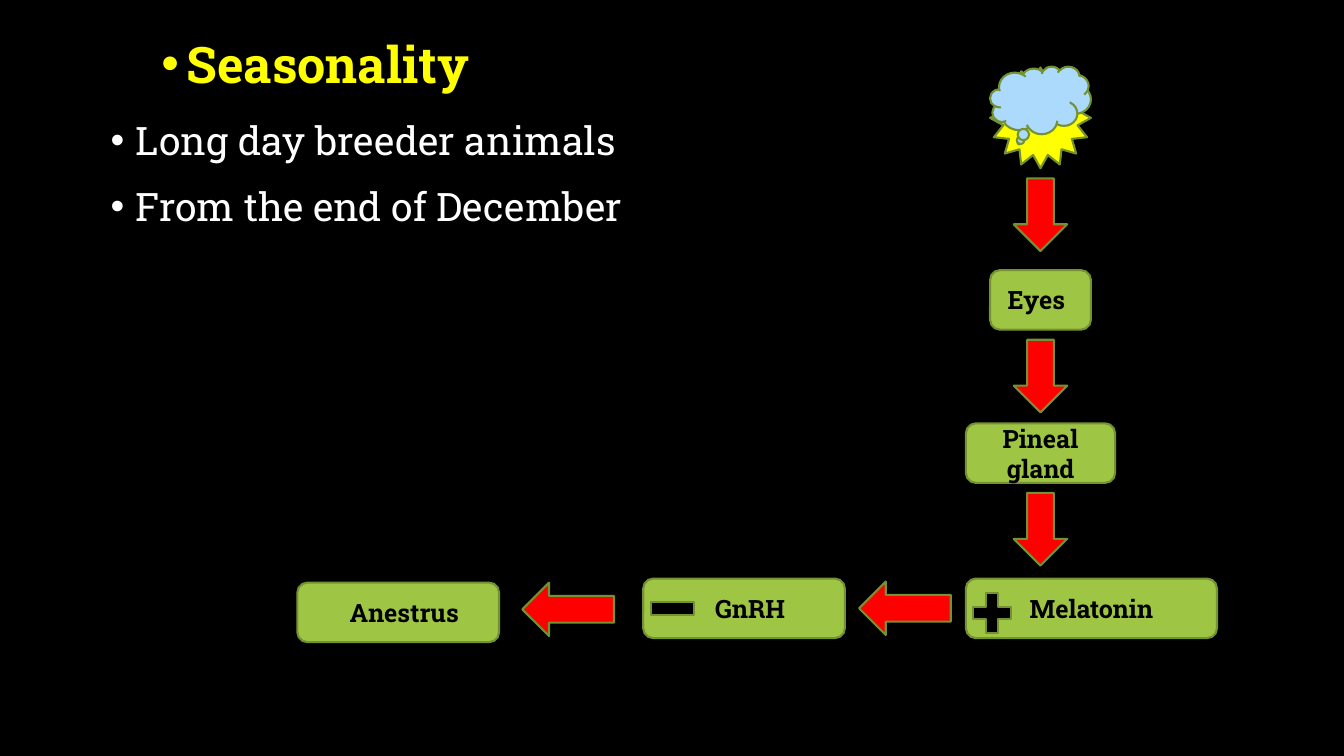
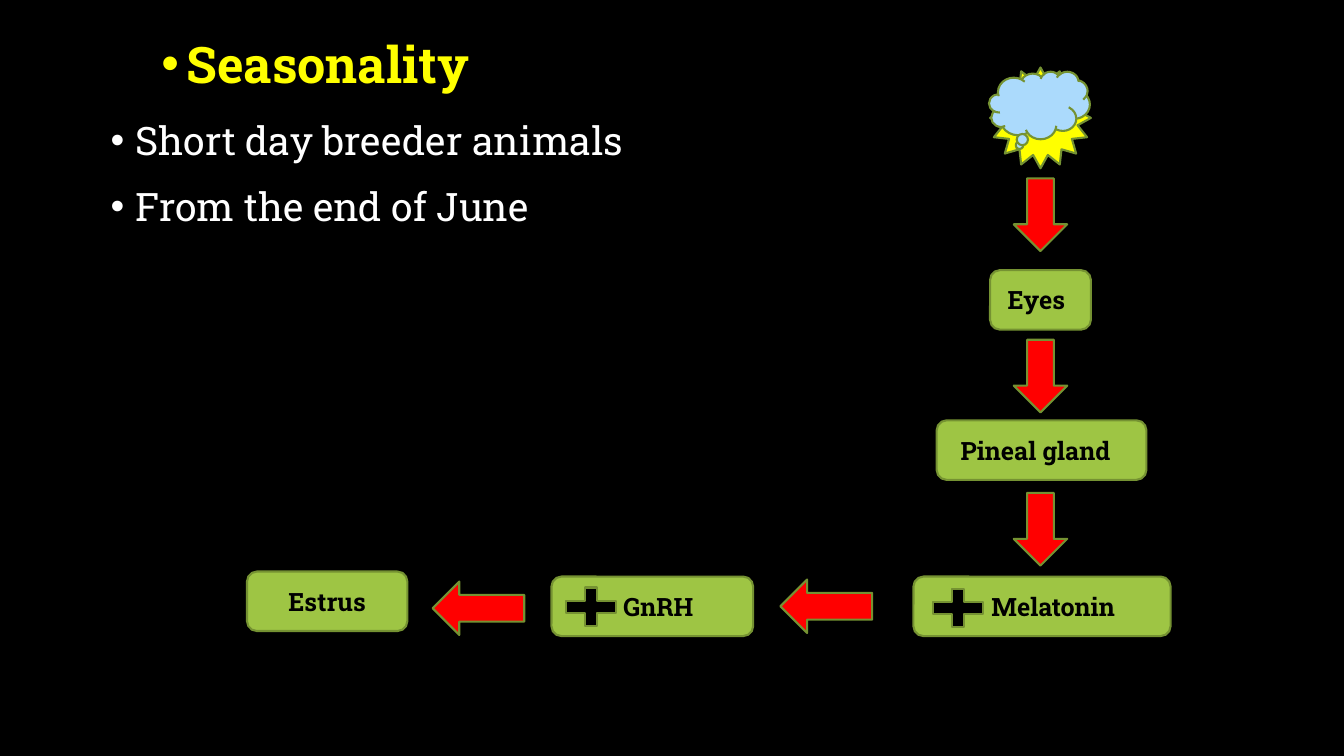
from dataclasses import dataclass

from lxml import etree
from pptx import Presentation
from pptx.dml.color import RGBColor
from pptx.enum.shapes import MSO_SHAPE
from pptx.enum.text import MSO_ANCHOR, MSO_AUTO_SIZE, PP_ALIGN
from pptx.oxml.ns import qn
from pptx.util import Inches, Pt

STAR, CLOUD = MSO_SHAPE.STAR_16_POINT, MSO_SHAPE.CLOUD_CALLOUT
DOWN, LEFT = MSO_SHAPE.DOWN_ARROW, MSO_SHAPE.LEFT_ARROW
BOX = MSO_SHAPE.ROUNDED_RECTANGLE
PLUS, MINUS = MSO_SHAPE.MATH_PLUS, MSO_SHAPE.MATH_MINUS
TOP, MIDDLE = MSO_ANCHOR.TOP, MSO_ANCHOR.MIDDLE
ALIGN_LEFT, ALIGN_CENTER = PP_ALIGN.LEFT, PP_ALIGN.CENTER
NO_AUTOFIT = MSO_AUTO_SIZE.NONE


@dataclass(frozen=True)
class Theme:
    font: str = "Roboto Slab"
    black: str = "000000"
    white: str = "FFFFFF"
    yellow: str = "FFFF00"
    red: str = "FF0000"
    green: str = "9EC544"
    outline: str = "759232"
    sky: str = "ABDAFC"
    title_size: int = 36
    body_size: int = 28
    label_size: int = 18
    line_width: float = 1.5


THEME = Theme()
AXIS = 10.32            # centre of the vertical chain
INSET = 0.1
BOX_HEIGHT = 0.59
ARROW_WIDTH = 0.53
DOWN_LENGTH, LEFT_LENGTH = 0.72, 0.91
DOWN_TOPS = (1.77, 3.37, 4.89)


def rgb(value):
    return RGBColor.from_string(value)


def write(p, text, size, color, bold=False, align=ALIGN_LEFT, spacing=1.0, before=0):
    p.alignment = align
    p.line_spacing = spacing
    p.space_before = Pt(before)
    r = p.add_run()
    r.text = text
    r.font.name = THEME.font
    r.font.size = Pt(size)
    r.font.bold = bold
    r.font.color.rgb = rgb(color)


def add_bullet(p, margin):
    """Hang a round bullet a quarter inch left of the margin."""
    pPr = p._p.get_or_add_pPr()
    pPr.set("marL", str(Inches(margin)))
    pPr.set("indent", str(Inches(-0.25)))
    etree.SubElement(pPr, qn("a:buFont")).set("typeface", "Arial")
    etree.SubElement(pPr, qn("a:buChar")).set("char", "•")


class Deck:
    def __init__(self):
        self.prs = Presentation()
        self.prs.slide_width, self.prs.slide_height = Inches(13.33), Inches(7.5)
        fill = self.prs.slide_master.background.fill
        fill.solid()
        fill.fore_color.rgb = rgb(THEME.black)
        self.slide = None

    def new_slide(self, title):
        self.slide = self.prs.slides.add_slide(self.prs.slide_layouts[5])
        sp = self.slide.shapes.title
        sp.left, sp.top, sp.width, sp.height = map(Inches, (1, 0.28, 6, 0.75))
        tf = sp.text_frame
        tf.auto_size = NO_AUTOFIT
        tf.vertical_anchor = TOP
        p = tf.paragraphs[0]
        add_bullet(p, 0.75)
        write(p, title, THEME.title_size, THEME.yellow, bold=True)

    def bullets(self, lines):
        sp = self.slide.shapes.add_textbox(*map(Inches, (1, 1.06, 7, 1.5)))
        tf = sp.text_frame
        tf.word_wrap = True
        for i, line in enumerate(lines):
            p = tf.add_paragraph() if i else tf.paragraphs[0]
            add_bullet(p, 0.25)
            write(p, line, THEME.body_size, THEME.white, spacing=1.1,
                  before=10 if i else 0)

    def shape(self, kind, left, top, width, height, fill):
        sp = self.slide.shapes.add_shape(
            kind, *map(Inches, (left, top, width, height)))
        sp.shadow.inherit = False
        sp.fill.solid()
        sp.fill.fore_color.rgb = rgb(fill)
        sp.line.color.rgb = rgb(THEME.outline)
        sp.line.width = Pt(THEME.line_width)
        return sp

    def box(self, text, left, top, width, nudge=0):
        """Draw a labelled box; nudge moves its label sideways."""
        sp = self.shape(BOX, left, top, width, BOX_HEIGHT, THEME.green)
        tf = sp.text_frame
        tf.word_wrap = True
        tf.vertical_anchor = MIDDLE
        tf.margin_left = Inches(INSET + max(2 * nudge, 0))
        tf.margin_right = Inches(INSET + max(-2 * nudge, 0))
        write(tf.paragraphs[0], text, THEME.label_size, THEME.black, bold=True,
              align=ALIGN_CENTER)

    def down_arrow(self, top):
        self.shape(DOWN, AXIS - ARROW_WIDTH / 2, top, ARROW_WIDTH, DOWN_LENGTH,
                   THEME.red)

    def left_arrow(self, left, top):
        self.shape(LEFT, left, top, LEFT_LENGTH, ARROW_WIDTH, THEME.red)

    def sign(self, kind, left, top, width, height):
        self.shape(kind, left, top, width, height, THEME.black)

    def sky(self, left, top):
        """Draw the sun with a cloud over it, the cloud at left, top."""
        self.shape(STAR, AXIS - 0.5, 0.67, 1, 1, THEME.yellow)
        self.shape(CLOUD, left, top, 1, 0.67, THEME.sky)


SEASONS = [
    {
        "bullets": ["Long day breeder animals", "From the end of December"],
        "cloud": (9.82, 0.66),
        "boxes": [("Pineal gland", 9.58, 4.2, 1.48),
                  ("Melatonin", 9.58, 5.74, 2.49),
                  ("GnRH", 6.38, 5.74, 2, 0.06),
                  ("Anestrus", 2.95, 5.78, 2, 0.06)],
        "arrows": [(8.52, 5.77), (5.18, 5.78)],
        "signs": [(MINUS, 6.38, 5.76, 0.58, 0.55),
                  (PLUS, 9.58, 5.81, 0.52, 0.54)],
    },
    {
        "bullets": ["Short day breeder animals", "From the end of June"],
        "cloud": (9.81, 0.71),
        "boxes": [("Pineal gland", 9.29, 4.17, 2.08, -0.06),
                  ("Melatonin", 9.06, 5.72, 2.55, 0.11),
                  ("GnRH", 5.47, 5.72, 2, 0.06),
                  ("Estrus", 2.45, 5.67, 1.59)],
        "arrows": [(7.74, 5.75), (4.29, 5.77)],
        "signs": [(PLUS, 5.52, 5.76, 0.68, 0.52),
                  (PLUS, 9.16, 5.77, 0.68, 0.52)],
    },
]


def main():
    deck = Deck()
    for season in SEASONS:
        deck.new_slide("Seasonality")
        deck.bullets(season["bullets"])
        deck.sky(*season["cloud"])
        deck.box("Eyes", AXIS - 0.5, 2.68, 1, -0.04)
        for top in DOWN_TOPS:
            deck.down_arrow(top)
        for box in season["boxes"]:
            deck.box(*box)
        for arrow in season["arrows"]:
            deck.left_arrow(*arrow)
        for sign in season["signs"]:
            deck.sign(*sign)
    deck.prs.save("out.pptx")


if __name__ == "__main__":
    main()
